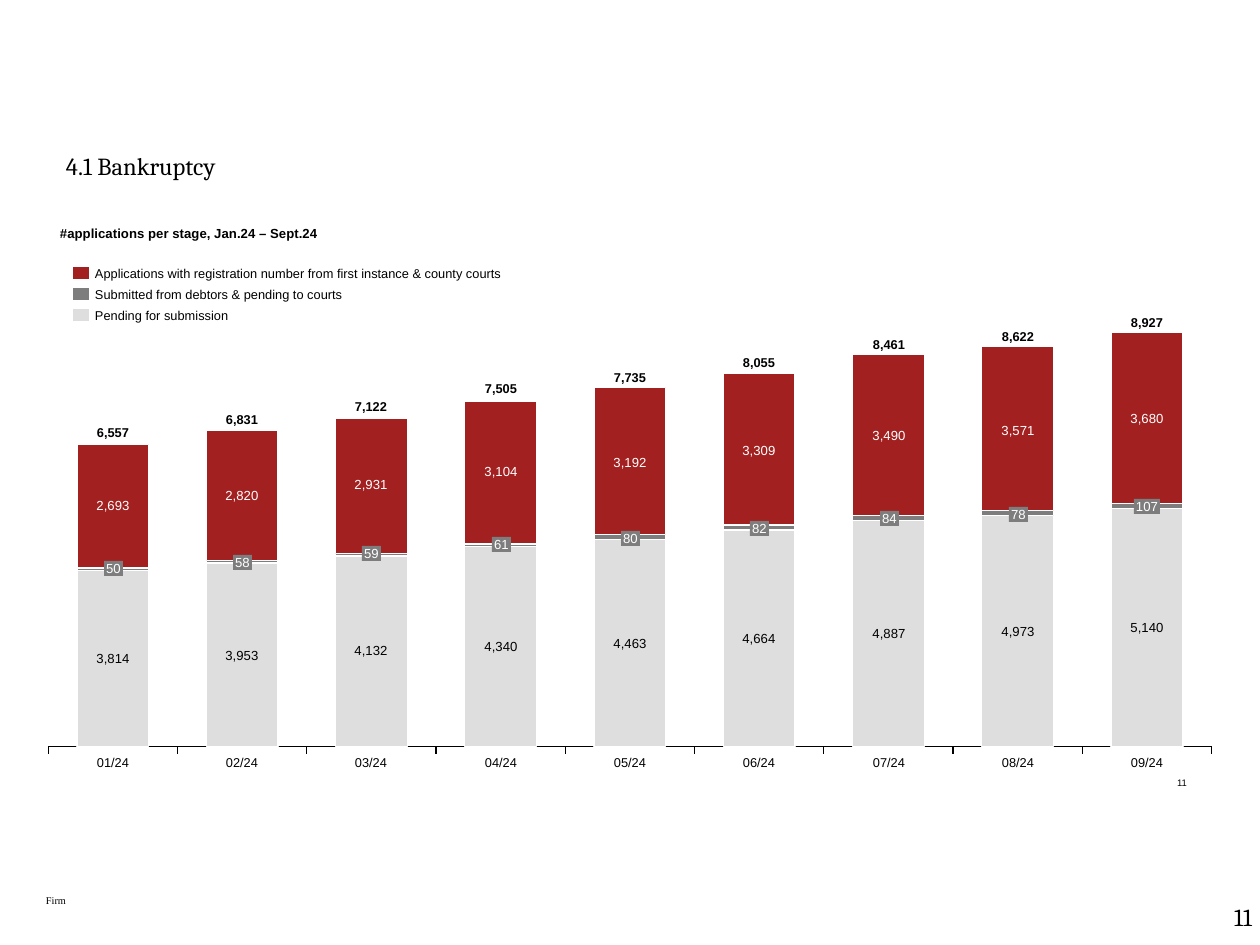
from pptx import Presentation, util as u
from pptx.chart.data import CategoryChartData
from pptx.dml.color import RGBColor
from pptx.enum import chart as ch, shapes, text
from pptx.oxml import parse_xml
from pptx.oxml.ns import nsdecls

PX = 914400 / 126
RED, GREY, LIGHT, BLACK, WHITE = "A32020", "7D7D7D", "DEDEDE", "000000", "FFFFFF"
LEFT, CENTER, RIGHT = text.PP_ALIGN.LEFT, text.PP_ALIGN.CENTER, text.PP_ALIGN.RIGHT
TOP, MIDDLE, BOTTOM = text.MSO_ANCHOR.TOP, text.MSO_ANCHOR.MIDDLE, text.MSO_ANCHOR.BOTTOM

prs = Presentation()
prs.slide_width, prs.slide_height = u.Inches(10), u.Inches(7.5)
s = prs.slides.add_slide(prs.slide_layouts[6])


def rgb(color):
    return RGBColor.from_string(color)


def label(words, box, size, color=BLACK, font="Arial", bold=False,
          align=LEFT, anchor=TOP, wrap=False, fill=None):
    box = [round(v * PX) for v in box]
    if fill:
        sp = s.shapes.add_shape(shapes.MSO_SHAPE.RECTANGLE, *box)
        sp.shadow.inherit = False
        sp.fill.solid()
        sp.fill.fore_color.rgb = rgb(fill)
        sp.line.fill.background()
    else:
        sp = s.shapes.add_textbox(*box)
    tf = sp.text_frame
    tf.margin_left = tf.margin_right = tf.margin_top = tf.margin_bottom = 0
    tf.word_wrap, tf.vertical_anchor = wrap, anchor
    p = tf.paragraphs[0]
    p.text, p.alignment = words, align
    p.font.size, p.font.name, p.font.bold = u.Pt(size), font, bold
    p.font.color.rgb = rgb(color)
    return p


label("Firm", (46, 894, 306, 13), 5.9, font="Times New Roman", wrap=True)

bars = [
    ("01/24", (74, 1, 52), (3814, 50, 2693), 6557),
    ("02/24", (77, 1, 55), (3953, 58, 2820), 6831),
    ("03/24", (80, 1, 57), (4132, 59, 2931), 7122),
    ("04/24", (84, 1, 60), (4340, 61, 3104), 7505),
    ("05/24", (87, 2, 62), (4463, 80, 3192), 7735),
    ("06/24", (91, 2, 64), (4664, 82, 3309), 8055),
    ("07/24", (95, 2, 68), (4887, 84, 3490), 8461),
    ("08/24", (97, 2, 69), (4973, 78, 3571), 8622),
    ("09/24", (100, 2, 72), (5140, 107, 3680), 8927),
]
data = CategoryChartData()
data.categories = [str(i + 1) for i in range(len(bars))]
for i in range(3):
    data.add_series(f"Series {i + 1}", [bar[1][i] for bar in bars])
chart = s.shapes.add_chart(ch.XL_CHART_TYPE.COLUMN_STACKED,
                           *[round(v * PX) for v in (40, 324, 1180, 431)], data).chart
chart.has_legend = chart.has_title = False
chart.font.size, chart.font.name = u.Pt(10), "Times New Roman"
chart.font.color.rgb = rgb(BLACK)
plot = chart.plots[0]
plot.gap_width, plot.overlap, plot.vary_by_categories = 80, 100, False
for series, color in zip(plot.series, (LIGHT, GREY, RED)):
    series.format.fill.solid()
    series.format.fill.fore_color.rgb = rgb(color)
    series.format.line.color.rgb = rgb(WHITE)
    series.format.line.width = u.Pt(0.75)
axis = chart.category_axis
axis.tick_label_position = ch.XL_TICK_LABEL_POSITION.NONE
axis.major_tick_mark = ch.XL_TICK_MARK.OUTSIDE
axis.format.line.color.rgb = rgb(BLACK)
axis.format.line.width = u.Pt(0.75)
axis = chart.value_axis
axis.visible = axis.has_major_gridlines = False
axis.minimum_scale, axis.maximum_scale = 0, 174
area = plot._element.getparent()
for old in area.findall("{*}layout"):
    area.remove(old)
area.insert(0, parse_xml(
    f'<c:layout {nsdecls("c")}><c:manualLayout><c:layoutTarget val="inner"/>'
    '<c:xMode val="edge"/><c:yMode val="edge"/><c:x val="0.007"/><c:y val="0.02"/>'
    '<c:w val="0.986"/><c:h val="0.96"/></c:manualLayout></c:layout>'))

unit = 413 / 8927
for i, (month, values, counts, total) in enumerate(bars):
    x = 113 + round(129.25 * i)
    y = 746
    for count, color, fill in zip(counts, (BLACK, WHITE, WHITE), (None, GREY, None)):
        words = f"{count:,}"
        w = {2: 19, 3: 26}.get(len(words), 38)
        label(words, (x - w // 2, round(y - count * unit / 2) - 7, w, 15), 7.5, color,
              align=CENTER, anchor=MIDDLE, fill=fill)
        y -= count * unit
    label(f"{total:,}", (x - 19, round(y) - 18, 38, 15), 7.3, bold=True,
          align=CENTER, anchor=BOTTOM)
    label(month, (x - 19, 755, 38, 15), 7.3, align=CENTER)

legend = [
    ("Applications with registration number from first instance & county courts", RED, 420),
    ("Submitted from debtors & pending to courts", GREY, 260),
    ("Pending for submission", LIGHT, 146),
]
for i, (words, color, w) in enumerate(legend):
    y = 266 + 21 * i
    sp = s.shapes.add_shape(shapes.MSO_SHAPE.RECTANGLE,
                            *[round(v * PX) for v in (72, y, 18, 14)])
    sp.shadow.inherit = False
    sp.fill.solid()
    sp.fill.fore_color.rgb = rgb(color)
    sp.line.color.rgb = rgb(WHITE)
    sp.line.width = u.Pt(0.75)
    label(words, (95, y, w, 15), 7.3, anchor=MIDDLE)

p = label("4.1 Bankruptcy", (66, 155, 1129, 30), 14, font="Cambria", wrap=True)
p.line_spacing = 0.85
label("11", (1013, 774, 174, 14), 5.4, align=RIGHT, anchor=BOTTOM, wrap=True)
label("#applications per stage, Jan.24 – Sept.24", (60, 225, 1072, 18), 7.5, bold=True, wrap=True)
label("11", (1042, 902, 210, 39), 14, font="Cambria", align=RIGHT, wrap=True)

prs.save("out.pptx")
